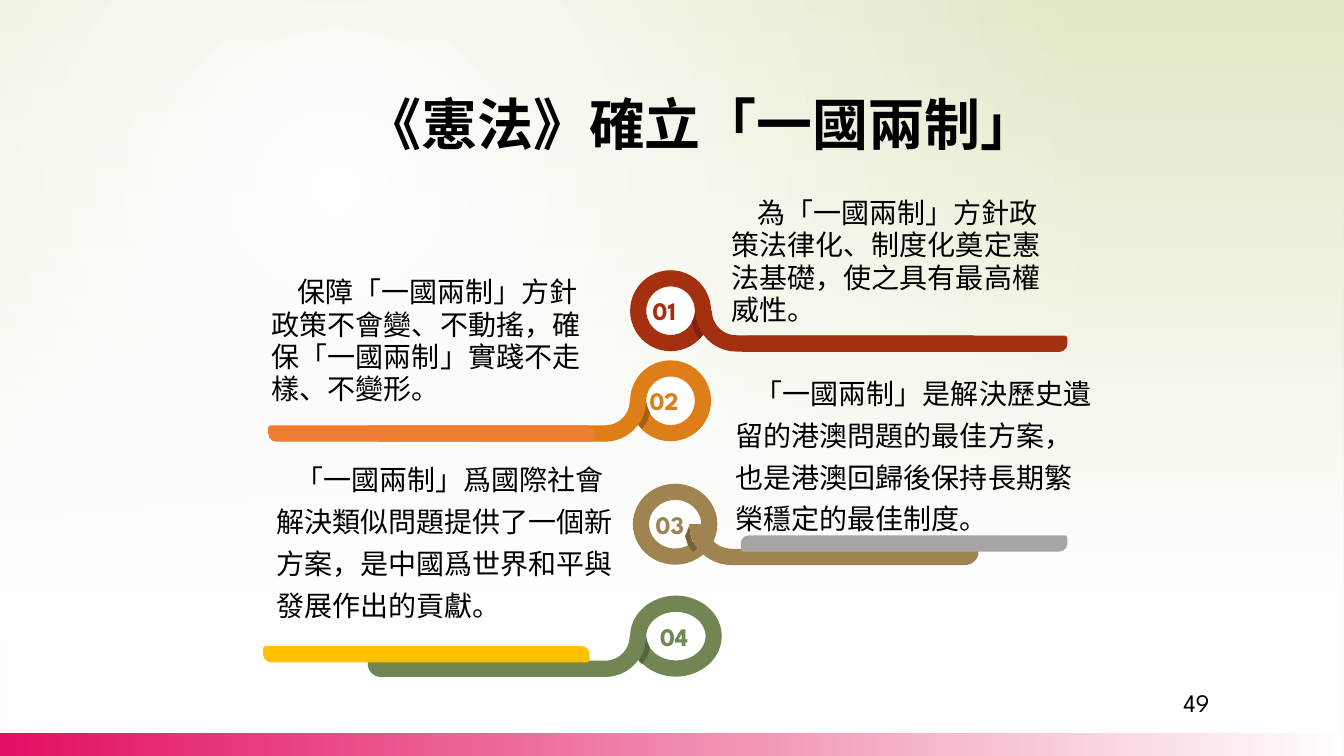
from math import cos, sin, pi
from lxml import etree
from pptx import Presentation
from pptx.dml.color import RGBColor
from pptx.enum.shapes import MSO_SHAPE as Kind
from pptx.enum.text import MSO_ANCHOR as Anchor, PP_ALIGN as Align
from pptx.oxml.ns import qn
from pptx.util import Cm, Pt

BODY_FONT, NUMBER_FONT = "Calibri", "League Spartan"
WHITE, BLACK = "FFFFFF", "000000"

deck = Presentation()
deck.slide_width, deck.slide_height = Cm(33.87), Cm(19.05)
page = deck.slides.add_slide(deck.slide_layouts[6])


def paint(shape, color):
    shape.shadow.inherit = False
    shape.fill.solid()
    shape.fill.fore_color.rgb = RGBColor.from_string(color)
    shape.line.fill.background()


def write(para, text, size, font, color=BLACK, bold=False):
    span = para.add_run()
    span.text = text
    span.font.size, span.font.name, span.font.bold = Pt(size), font, bold
    span.font.color.rgb = RGBColor.from_string(color)


# Background and its two gradient overlays: stops are (position, colour, opacity)
page.background.fill.solid()
backdrop = page.element.find(".//" + qn("p:bgPr"))
veil = page.shapes.add_shape(Kind.RECTANGLE, 0, 0, Cm(33.87), Cm(19.05))
strip = page.shapes.add_shape(Kind.RECTANGLE, 0, Cm(18.48), Cm(33.87), Cm(0.57))
paint(veil, WHITE)
paint(strip, WHITE)
radial = ('<a:path path="circle"><a:fillToRect l="50000" t="50000" '
          'r="100000" b="100000"/></a:path>')
gradients = [
    (backdrop, [(0, WHITE, 100), (100, "DFE8C4", 100)], radial),
    (veil.element.spPr, [(0, WHITE, 0), (34, WHITE, 44), (78, WHITE, 100)],
     '<a:lin ang="5400000" scaled="0"/>'),
    (strip.element.spPr, [(0, "E30F60", 100), (100, "E30F60", 0)],
     '<a:lin ang="0" scaled="0"/>'),
]
for owner, stops, direction in gradients:
    stop_xml = "".join(
        f'<a:gs pos="{pos * 1000}"><a:srgbClr val="{color}">'
        f'<a:alpha val="{opacity * 1000}"/></a:srgbClr></a:gs>'
        for pos, color, opacity in stops)
    gradient = etree.fromstring(
        '<a:gradFill xmlns:a="http://schemas.openxmlformats.org/drawingml/2006/main" '
        f'rotWithShape="1"><a:gsLst>{stop_xml}</a:gsLst>{direction}</a:gradFill>')
    owner.replace(owner.find(qn("a:solidFill")), gradient)

# Title
title = page.shapes.add_textbox(Cm(6.91), Cm(1.3), Cm(21.34), Cm(2.77)).text_frame
title.word_wrap, title.vertical_anchor = True, Anchor.MIDDLE
title.margin_left = title.margin_right = Cm(0.18)
title.margin_top = title.margin_bottom = Cm(0.1)
para = title.paragraphs[0]
para.alignment, para.line_spacing = Align.CENTER, 1.5
write(para, " ", 21, BODY_FONT, bold=True)
write(para, "《憲法》確立「一國兩制」", 40, BODY_FONT, bold=True)

# Outlines of ribbon and fold, measured from where the ribbon leaves its ring
quarter = [step * pi / 24 for step in range(13)]
ribbon = [(1.03 - 0.62 * cos(t), 0.62 * sin(t)) for t in quarter]
ribbon += [(7.01, 0.62)]
ribbon += [(6.68 + 0.33 * cos(t), 0.7 + 0.33 * sin(t)) for t in quarter]
ribbon += [(1.03 - 1.03 * sin(t), 1.03 * cos(t)) for t in quarter]
fold = [(0, 0.02), (0.03, 0.25), (0.08, 0.43), (0.19, 0.61),
        (0.1, 0.71), (-0.03, 0.53), (-0.1, 0.3), (-0.03, 0.13)]

# Numbered rings: colour, fold colour, centre y, ring x and width,
# disc x and width, ribbon x, horizontal scale (negative runs to the left)
markers = [
    ("A53010", "7C240C", 7.83, 15.88, 2.04, 15.98, 1.52, 17.53, 1),
    ("DE7E18", "A65E12", 10.1, 15.88, 2.04, 15.98, 1.52, 16.28, -1),
    ("9F8351", "77623D", 13.21, 15.95, 2.13, 16.1, 1.57, 17.37, 1.04),
    ("728653", "56653E", 16.03, 15.88, 2.31, 16.28, 1.42, 16.28, -1),
]
for number, marker in enumerate(markers, 1):
    color, dark, middle, ring_x, ring_w, disc_x, disc_w, start, stretch = marker
    disc = page.shapes.add_shape(Kind.OVAL, Cm(disc_x), Cm(middle - 0.61),
                                 Cm(disc_w), Cm(1.22))
    paint(disc, WHITE)
    frame = disc.text_frame
    frame.margin_left = frame.margin_right = frame.margin_top = frame.margin_bottom = 0
    frame.vertical_anchor = Anchor.MIDDLE
    frame.paragraphs[0].alignment = Align.CENTER
    write(frame.paragraphs[0], f"{number:02}", 18, NUMBER_FONT, color, True)

    ring = page.shapes.add_shape(Kind.DONUT, Cm(ring_x), Cm(middle - 1.02),
                                 Cm(ring_w), Cm(2.04))
    ring.adjustments[0] = 0.2
    paint(ring, color)

    for outline, fill in ((fold, dark), (ribbon, color)):
        points = [(Cm(start + stretch * x), Cm(middle + y)) for x, y in outline]
        builder = page.shapes.build_freeform(*points[0])
        builder.add_line_segments(points[1:], close=True)
        paint(builder.convert_to_shape(), fill)

# Statements: box, first-line indent, line spacing, text
statements = [
    (18.19, 4.83, 8.86, 3.53, 0.65, Pt(23.1),
     "為「一國兩制」方針政策法律化、制度化奠定憲法基礎，使之具有最高權威性。"),
    (6.6, 6.83, 8.86, 3.53, 0.65, Pt(23.1),
     "保障「一國兩制」方針政策不會變、不動搖，確保「一國兩制」實踐不走樣、不變形。"),
    (18.29, 9.14, 9.68, 4.52, 0.48, 1.25,
     "「一國兩制」是解決歷史遺留的港澳問題的最佳方案，也是港澳回歸後保持長期繁榮穩定的最佳制度。"),
    (6.71, 11.33, 9.25, 4.45, 0.48, 1.25,
     "「一國兩制」爲國際社會解決類似問題提供了一個新方案，是中國爲世界和平與發展作出的貢獻。"),
]
for left, top, width, height, indent, spacing, text in statements:
    box = page.shapes.add_textbox(Cm(left), Cm(top), Cm(width), Cm(height))
    box.text_frame.word_wrap = True
    para = box.text_frame.paragraphs[0]
    para.line_spacing = spacing
    settings = para._p.get_or_add_pPr()
    settings.set("marL", "0")
    settings.set("indent", str(Cm(indent)))
    write(para, text, 20, BODY_FONT)

# Bars under the statements: left, top, colour, corner rounding
bars = [
    (18.67, 8.46, "A53010", (0.5, 0.167)),
    (18.67, 13.49, "A5A5A5", (0.5, 0.167)),
    (6.76, 10.72, "ED7D31", (0.167, 0.5)),
    (6.63, 16.28, "FFC000", (0.167, 0.5)),
]
for left, top, color, corners in bars:
    bar = page.shapes.add_shape(Kind.ROUND_2_DIAG_RECTANGLE, Cm(left), Cm(top),
                                Cm(8.23), Cm(0.41))
    bar.adjustments[0], bar.adjustments[1] = corners
    paint(bar, color)

# Page number
footer = page.shapes.add_textbox(Cm(29.57), Cm(17.2), Cm(1.37), Cm(1.04)).text_frame
footer.word_wrap = True
write(footer.paragraphs[0], "49", 18, NUMBER_FONT)

deck.save("out.pptx")
